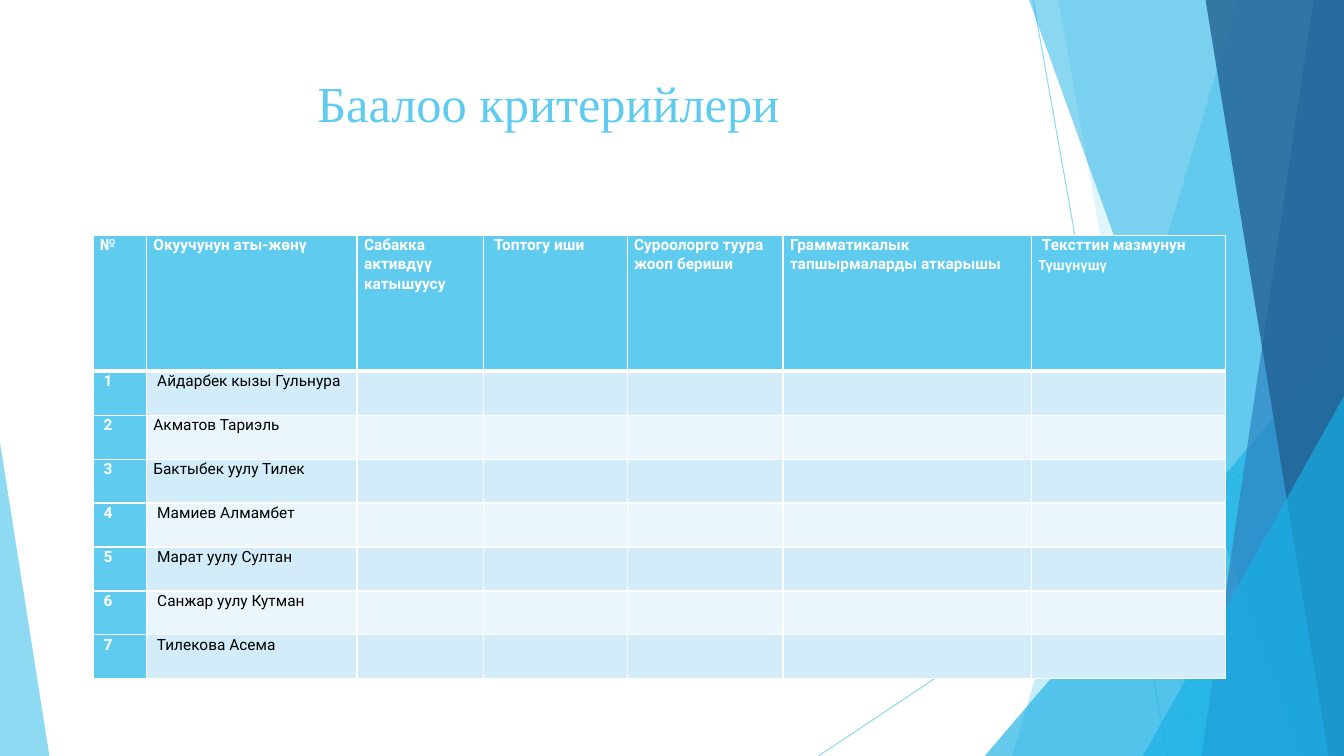
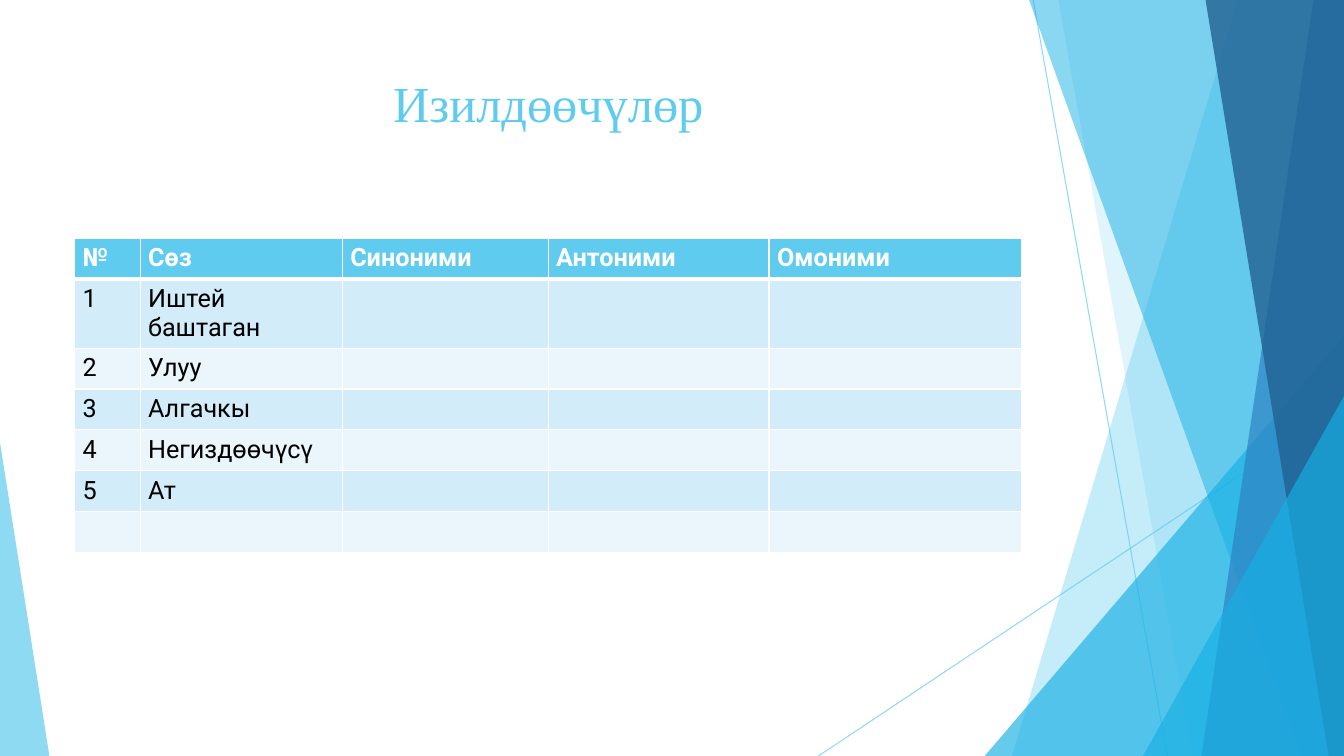
from lxml.etree import SubElement
from pptx import Presentation
from pptx.dml.color import RGBColor
from pptx.enum.shapes import MSO_CONNECTOR, MSO_SHAPE
from pptx.enum.text import MSO_ANCHOR, PP_ALIGN
from pptx.oxml.ns import qn
from pptx.util import Pt

WIDTH, HEIGHT = 960, 540
SKY, CYAN, BLUE, NAVY = "5FCBEF", "17B0E4", "2E83C3", "226292"
PALE, PALER, WHITE, BLACK = "D2ECF9", "EAF6FC", "FFFFFF", "000000"


def paint(fill, color):
    fill.solid()
    fill.fore_color.rgb = RGBColor.from_string(color)


def write(para, text, size=18, font="Roboto", color=BLACK, bold=False, align=None, spacing=None):
    span = para.add_run()
    span.text = text
    span.font.name = font
    span.font.size = Pt(size)
    span.font.bold = bold
    paint(span.font.fill, color)
    para.alignment = align
    para.line_spacing = spacing


deck = Presentation()
deck.slide_width, deck.slide_height = Pt(WIDTH), Pt(HEIGHT)

layout = deck.slide_layouts[5]
title, *footers = layout.placeholders
for footer in footers:
    layout.shapes.element.remove(footer.element)
title.left, title.top, title.width, title.height = Pt(53.3), Pt(48), Pt(676.8), Pt(104)
title.text_frame.vertical_anchor = MSO_ANCHOR.TOP

pages = [deck.slides.add_slide(layout) for _ in range(2)]
for page, heading in zip(pages, ["Баалоо критерийлери", "Изилдөөчүлөр"]):
    write(page.shapes.title.text_frame.paragraphs[0], heading, size=36,
          font="Times New Roman", color=SKY, align=PP_ALIGN.CENTER)

lines = [(738, 0, 833.8, HEIGHT), (WIDTH, 290, 584.6, HEIGHT)]
facets = [
    ("band", (884.2, 722.9), SKY, 36),
    ("band", (756, 851.8), SKY, 20),
    ("corner", (703.4, 239.8, 256.6, 1), CYAN, 66),
    ("band", (735.1, 929.5), CYAN, 50),
    ("band", (938.2, 858.2), BLUE, 70),
    ("band", (861.1, 949), NAVY, 80),
    ("corner", (816.5, 283, 143.5, 1), CYAN, 66),
    ("corner", (0, 316.1, 35.3, 0), SKY, 70),
]

canvas = pages[0].shapes
backdrop = []
for ends in lines:
    line = canvas.add_connector(MSO_CONNECTOR.STRAIGHT, *map(Pt, ends))
    line.line.width = Pt(0.75)
    paint(line.line.fill, SKY)
    SubElement(line.element.find(qn("p:spPr")), qn("a:effectLst"))
    backdrop.append((line, 70))

for kind, place, color, opacity in facets:
    if kind == "band":
        top_x, bottom_x = place
        outline = canvas.build_freeform(Pt(top_x), Pt(0))
        corners = [(WIDTH, 0), (WIDTH, HEIGHT), (bottom_x, HEIGHT)]
        outline.add_line_segments([(Pt(x), Pt(y)) for x, y in corners], close=True)
        facet = outline.convert_to_shape()
    else:
        left, top, width, apex = place
        facet = canvas.add_shape(MSO_SHAPE.ISOSCELES_TRIANGLE, Pt(left), Pt(top),
                                 Pt(width), Pt(HEIGHT - top))
        facet.adjustments[0] = apex
    paint(facet.fill, color)
    facet.line.fill.background()
    facet.shadow.inherit = False
    backdrop.append((facet, opacity))

for position, (shape, opacity) in enumerate(backdrop, start=2):
    for tint in shape.element.iter(qn("a:srgbClr")):
        SubElement(tint, qn("a:alpha"), val=str(opacity * 1000))
    layout.shapes.element.insert(position, shape.element)

pupils = [" Айдарбек кызы Гульнура", "Акматов Тариэль", "Бактыбек уулу Тилек",
          " Мамиев Алмамбет", " Марат уулу Султан", " Санжар уулу Кутман",
          " Тилекова Асема"]
words = ["Иштей баштаган", "Улуу", "Алгачкы", "Негиздөөчүсү", "Ат"]

grids = [
    dict(left=66.4, top=168, size=11, spacing=1.07, margins=(5, 0), accent_column=True,
         columns=[38.2, 150.5, 90.5, 102.4, 111.4, 177.6, 138.3], heights=[97.2] + [31.4] * 7,
         rows=[["№", "Окуучунун аты-жөнү", "Сабакка активдүү катышуусу", " Топтогу иши",
                "Суроолорго туура жооп бериши", "Грамматикалык тапшырмаларды аткарышы",
                " Тексттин мазмунун"]]
         + [[f" {number}", name] for number, name in enumerate(pupils, start=1)]),
    dict(left=53.3, top=170, size=18, spacing=None, margins=(5.7, 3.6), accent_column=False,
         columns=[46.8, 144.4, 147.1, 157.8, 180.7], heights=[29.2] * 7,
         rows=[["№", "Сөз", "Синоними", "Антоними", "Омоними"]]
         + [[str(number), word] for number, word in enumerate(words, start=1)] + [[]]),
]

tables = []
for page, grid in zip(pages, grids):
    columns, heights = grid["columns"], grid["heights"]
    table = page.shapes.add_table(len(heights), len(columns), Pt(grid["left"]), Pt(grid["top"]),
                                  Pt(sum(columns)), Pt(sum(heights))).table
    tables.append(table)
    table.first_col = grid["accent_column"]
    for column, width in zip(table.columns, columns):
        column.width = Pt(width)
    for row_index, (row, height) in enumerate(zip(table.rows, heights)):
        row.height = Pt(height)
        texts = grid["rows"][row_index]
        for column_index, cell in enumerate(row.cells):
            accent = row_index == 0 or (grid["accent_column"] and column_index == 0)
            properties = cell._tc.get_or_add_tcPr()
            for side in "LRTB":
                thick = (row_index, side) in [(0, "B"), (1, "T")]
                border = SubElement(properties, qn(f"a:ln{side}"), w=str(Pt(3 if thick else 1)))
                SubElement(SubElement(border, qn("a:solidFill")), qn("a:srgbClr"), val=WHITE)
            paint(cell.fill, SKY if accent else PALE if row_index % 2 else PALER)
            if column_index < len(texts):
                across, down = grid["margins"]
                cell.margin_left = cell.margin_right = Pt(across)
                cell.margin_top = cell.margin_bottom = Pt(down)
                write(cell.text_frame.paragraphs[0], texts[column_index], size=grid["size"],
                      color=WHITE if accent else BLACK, bold=accent, spacing=grid["spacing"])

write(tables[0].cell(0, 6).text_frame.add_paragraph(), "Түшүнүшү", size=11, font="Calibri",
      color=WHITE, bold=True, spacing=1.07)

deck.save("out.pptx")
